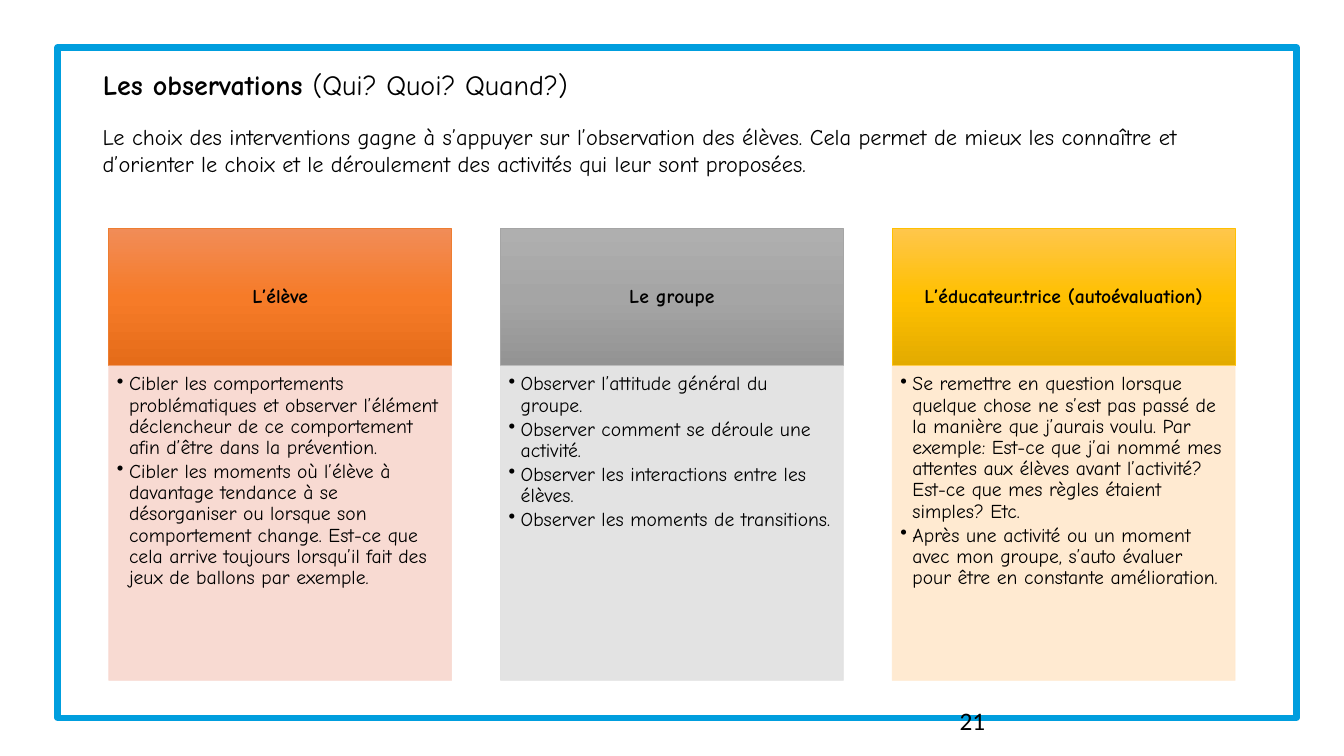
from copy import deepcopy

from lxml import etree
from pptx import Presentation
from pptx.dml.color import RGBColor
from pptx.enum.shapes import MSO_SHAPE
from pptx.enum.text import MSO_ANCHOR, MSO_AUTO_SIZE, PP_ALIGN
from pptx.oxml.ns import qn
from pptx.util import Inches, Pt

RECTANGLE = MSO_SHAPE.RECTANGLE
TOP, MIDDLE = MSO_ANCHOR.TOP, MSO_ANCHOR.MIDDLE
LEFT, CENTER = PP_ALIGN.LEFT, PP_ALIGN.CENTER
TITLE_ONLY = 5
FONT = "Comic Neue"

GRID_LEFT, GRID_RIGHT = 1.08, 12.25
COLUMN_WIDTH = 3.4
HEADER_TOP, HEADER_HEIGHT, LIST_HEIGHT = 2.27, 1.36, 3.12
BULLET_INDENT = 0.12

THEMES = [
    (
        "L’élève",
        ("F18C57", "F67B28", "E56C19"), "ED7D31", "F8D7CE",
        [
            "Cibler les comportements problématiques et observer l’élément "
            "déclencheur de ce comportement afin d’être dans la prévention.",
            "Cibler les moments où l’élève à davantage tendance à se "
            "désorganiser ou lorsque son comportement change. Est-ce que cela "
            "arrive toujours lorsqu’il fait des jeux de ballons par exemple.",
        ],
    ),
    (
        "Le groupe",
        ("AFAFAF", "A5A5A5", "939393"), "A5A5A5", "E1E1E1",
        [
            "Observer l’attitude général du groupe.",
            "Observer comment se déroule une activité.",
            "Observer les interactions entre les élèves.",
            "Observer les moments de transitions.",
        ],
    ),
    (
        "L’éducateur.trice (autoévaluation)",
        ("FFC64B", "FFC000", "E3AB00"), "FFC000", "FFE8CC",
        [
            "Se remettre en question lorsque quelque chose ne s’est pas passé "
            "de la manière que j’aurais voulu. Par exemple: Est-ce que j’ai "
            "nommé mes attentes aux élèves avant l’activité? Est-ce que mes "
            "règles étaient simples? Etc.",
            "Après une activité ou un moment avec mon groupe, s’auto évaluer "
            "pour être en constante amélioration.",
        ],
    ),
]


def color(hex_value):
    return RGBColor.from_string(hex_value)


def box(left, top, width, height):
    return [Inches(length) for length in (left, top, width, height)]


def write(holder, paragraphs, size=14, font=FONT, align=LEFT, anchor=TOP,
          spacing=None, after=None, insets=(0.1, 0.05, 0.1, 0.05), bullet=None):
    frame = holder.text_frame
    frame.word_wrap = True
    frame.auto_size = MSO_AUTO_SIZE.NONE
    frame.vertical_anchor = anchor
    (frame.margin_left, frame.margin_top,
     frame.margin_right, frame.margin_bottom) = [Inches(i) for i in insets]
    for index, runs in enumerate(paragraphs):
        paragraph = frame.add_paragraph() if index else frame.paragraphs[0]
        paragraph.alignment = align
        paragraph.line_spacing = spacing
        if after is not None:
            paragraph.space_after = Pt(after)
        for words, bold in runs:
            run = paragraph.add_run()
            run.text = words
            run.font.name = font
            run.font.size = Pt(size)
            run.font.bold = bold
            run.font.color.rgb = color("000000")
        if bullet:
            add_bullet(paragraph, bullet)


def add_bullet(paragraph, character):
    paragraph.level = 1
    properties = paragraph._p.get_or_add_pPr()
    properties.set("marL", str(Inches(BULLET_INDENT)))
    properties.set("indent", str(-Inches(BULLET_INDENT)))
    etree.SubElement(properties, qn("a:buChar"), char=character)


def add_rectangle(slide, position, line, weight):
    rectangle = slide.shapes.add_shape(RECTANGLE, *position)
    rectangle.shadow.inherit = False
    rectangle.line.color.rgb = color(line)
    rectangle.line.width = Pt(weight)
    return rectangle


def fill_gradient(rectangle, shades):
    fill = rectangle.fill
    fill.gradient()
    fill.gradient_angle = 270
    stop_list = rectangle._element.spPr.find(".//" + qn("a:gsLst"))
    stop_list.insert(1, deepcopy(stop_list[0]))
    for stop, shade, position in zip(fill.gradient_stops, shades, (0, 0.5, 1)):
        stop.color.rgb = color(shade)
        stop.position = position


def add_header(slide, position, heading, shades, line):
    header = add_rectangle(slide, position, line, 0.5)
    fill_gradient(header, shades)
    write(header, [[(heading, True)]], align=CENTER, anchor=MIDDLE,
          spacing=0.9, insets=(0.11, 0.06, 0.11, 0.06))


def add_list(slide, position, items, tint):
    panel = add_rectangle(slide, position, tint, 0.5)
    panel.fill.solid()
    panel.fill.fore_color.rgb = color(tint)
    for tint_color in panel._element.spPr.iter(qn("a:srgbClr")):
        etree.SubElement(tint_color, qn("a:alpha"), val="90000")
    write(panel, [[(item, False)] for item in items], spacing=0.9, after=2,
          insets=(0.08, 0.08, 0.11, 0.12), bullet="•")


def add_text(slide, position, words, **style):
    write(slide.shapes.add_textbox(*position), [[(words, False)]], **style)


def main():
    deck = Presentation()
    deck.slide_width, deck.slide_height = Inches(13.33), Inches(7.5)
    slide = deck.slides.add_slide(deck.slide_layouts[TITLE_ONLY])

    title = slide.shapes.title
    title.left, title.top, title.width, title.height = box(0.92, 0.66, 11.5, 0.51)
    write(title, [[("Les observations ", True), ("(Qui? Quoi? Quand?)", False)]],
          size=20, spacing=0.9)

    border = add_rectangle(slide, box(0.57, 0.47, 12.29, 6.65), "009EDE", 4.5)
    border.fill.background()

    add_text(slide, box(0.92, 1.17, 11.34, 0.64),
             "Le choix des interventions gagne à s’appuyer sur l’observation des "
             "élèves. Cela permet de mieux les connaître et d’orienter le choix "
             "et le déroulement des activités qui leur sont proposées.", size=16)

    pitch = (GRID_RIGHT - GRID_LEFT - COLUMN_WIDTH) / (len(THEMES) - 1)
    for column, (heading, shades, line, tint, items) in enumerate(THEMES):
        left = GRID_LEFT + column * pitch
        add_header(slide, box(left, HEADER_TOP, COLUMN_WIDTH, HEADER_HEIGHT),
                   heading, shades, line)
        add_list(slide, box(left, HEADER_TOP + HEADER_HEIGHT, COLUMN_WIDTH,
                            LIST_HEIGHT), items, tint)

    add_text(slide, box(9.42, 6.95, 3, 0.4), "21", size=18, font="Calibri")
    deck.save("out.pptx")


if __name__ == "__main__":
    main()
